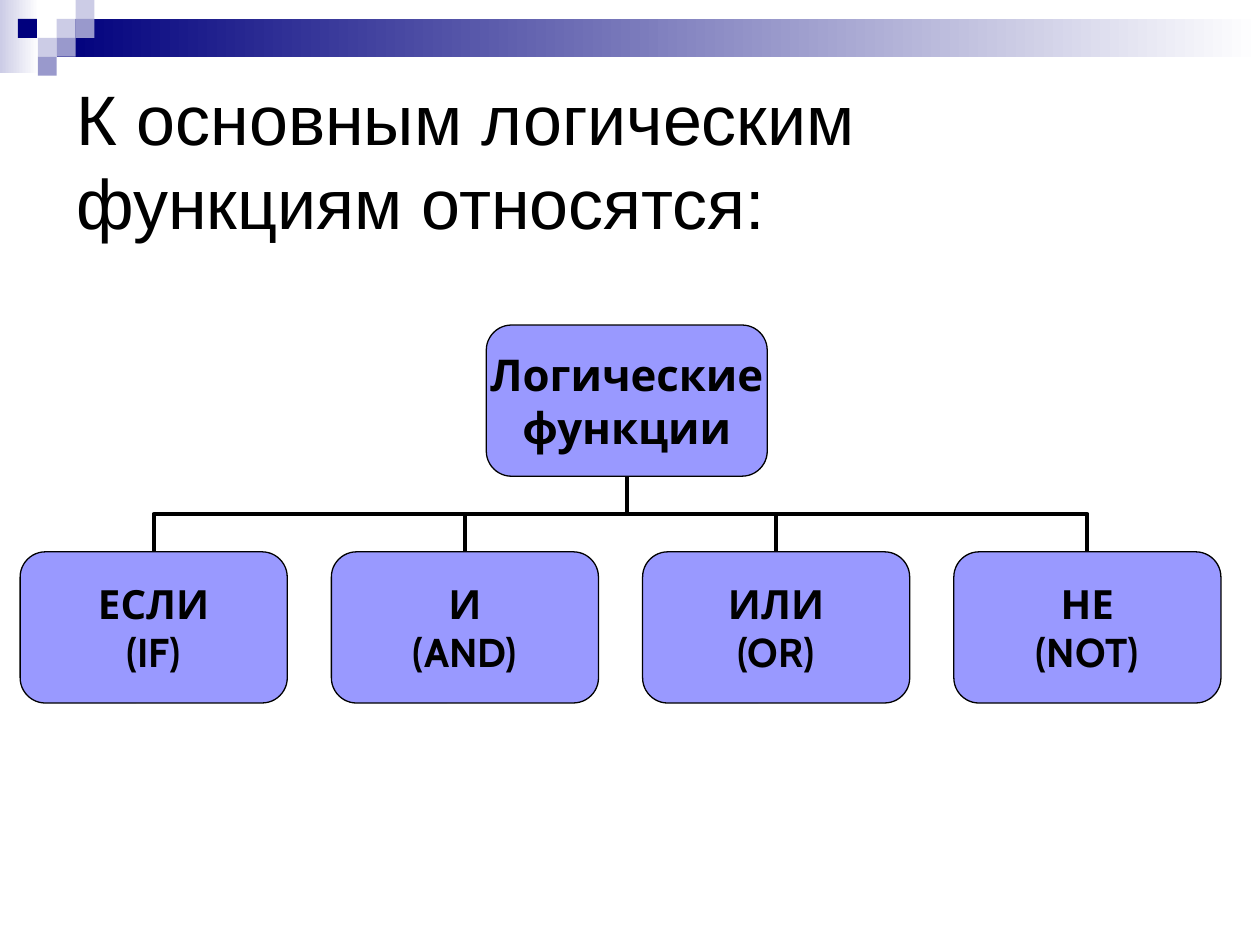
from dataclasses import dataclass

from lxml.etree import SubElement
from pptx import Presentation
from pptx.dml.color import RGBColor
from pptx.enum.shapes import MSO_CONNECTOR, MSO_SHAPE
from pptx.enum.text import MSO_ANCHOR, PP_ALIGN
from pptx.oxml.ns import qn
from pptx.util import Inches, Pt


@dataclass(frozen=True)
class Theme:
    navy: str = "00007D"
    lilac: str = "CCCCE6"
    violet: str = "9999CC"
    node: str = "9999FF"
    white: str = "FFFFFF"
    ink: str = "000000"
    title_font: str = "Arial"
    node_font: str = "Cabin"
    title_size: float = 40
    root_size: float = 25
    leaf_size: float = 23
    outline: float = 0.75
    branch: float = 2.25


@dataclass(frozen=True)
class Box:
    """A rectangle in inches."""
    left: float
    top: float
    width: float
    height: float

    @property
    def center(self):
        return self.left + self.width / 2

    @property
    def bottom(self):
        return self.top + self.height

    def inner(self, left, top, width, height):
        """Return a box inside this one, given as shares of its size."""
        return Box(self.left + left * self.width, self.top + top * self.height,
                   width * self.width, height * self.height)

    def lengths(self):
        return [Inches(v) for v in (self.left, self.top, self.width, self.height)]


THEME = Theme()
PAGE = Box(0, 0, 10, 7.5)
CELL = 0.15  # side of one square of the header mosaic
MOSAIC = [  # column, row, colour
    (3, 1, THEME.lilac), (4, 0, THEME.lilac), (4, 1, THEME.violet),
    (2, 2, THEME.lilac), (0.95, 1, THEME.navy), (3, 2, THEME.violet),
    (2, 3, THEME.violet),
]
ROOT = ["Логические", "функции"]
LEAVES = [["ЕСЛИ", "(IF)"], ["И", "(AND)"], ["ИЛИ", "(OR)"], ["НЕ", "(NOT)"]]


def color(value):
    return RGBColor.from_string(value)


def write(shape, lines, *, font, size, bold=False, align=PP_ALIGN.LEFT,
          wrap=True, inset=None):
    frame = shape.text_frame
    frame.word_wrap = wrap
    frame.vertical_anchor = MSO_ANCHOR.MIDDLE
    if inset is not None:
        frame.margin_left = frame.margin_right = Inches(inset)
        frame.margin_top = frame.margin_bottom = Inches(inset)
    for index, line in enumerate(lines):
        para = frame.paragraphs[0] if index == 0 else frame.add_paragraph()
        para.alignment = align
        span = para.add_run()
        span.text = line
        span.font.name = font
        span.font.size = Pt(size)
        span.font.bold = bold
        span.font.color.rgb = color(THEME.ink)


def add_block(page, box, fill, fade_to=None, kind=MSO_SHAPE.RECTANGLE):
    """Add a filled shape without outline; fade_to makes the fill a gradient."""
    shape = page.shapes.add_shape(kind, *box.lengths())
    shape.shadow.inherit = False
    shape.line.fill.background()
    if fade_to:
        shape.fill.gradient()
        shape.fill.gradient_angle = 0
        for stop, value, position in zip(shape.fill.gradient_stops,
                                         (fill, fade_to), (0, 1)):
            stop.color.rgb = color(value)
            stop.position = position
    else:
        shape.fill.solid()
        shape.fill.fore_color.rgb = color(fill)
    return shape


def add_header(page, box):
    add_block(page, Box(box.left, box.top, 0.31, 0.58), THEME.lilac, THEME.white)
    start = 3 * CELL
    add_block(page, Box(box.left + start, box.top + CELL, box.width - start, 2 * CELL),
              THEME.navy, THEME.white)
    for column, row, fill in MOSAIC:
        add_block(page, Box(box.left + column * CELL, box.top + row * CELL, CELL, CELL),
                  fill)


def add_title(page, box):
    shape = page.shapes.add_textbox(*box.lengths())
    write(shape, ["К основным логическим функциям относятся:"],
          font=THEME.title_font, size=THEME.title_size)


def add_node(page, box, lines, size):
    shape = add_block(page, box, THEME.node, kind=MSO_SHAPE.ROUNDED_RECTANGLE)
    shape.line.color.rgb = color(THEME.ink)
    shape.line.width = Pt(THEME.outline)
    write(shape, lines, font=THEME.node_font, size=size, bold=True,
          align=PP_ALIGN.CENTER, wrap=False, inset=0)


def add_branch(page, child, parent):
    """Join the top of child to the bottom of parent by a vertical-first elbow.

    An elbow starts horizontally, so it is laid out on its side and turned.
    """
    side = 1 if child.center > parent.center else -1
    middle_x = (child.center + parent.center) / 2
    middle_y = (child.top + parent.bottom) / 2
    half_rise = side * (child.top - parent.bottom) / 2
    half_run = abs(child.center - parent.center) / 2
    ends = (middle_x - half_rise, middle_y + half_run,
            middle_x + half_rise, middle_y - half_run)
    line = page.shapes.add_connector(MSO_CONNECTOR.ELBOW, *map(Inches, ends))
    line.line.color.rgb = color(THEME.ink)
    line.line.width = Pt(THEME.branch)
    properties = line._element.spPr
    properties.find(qn("a:xfrm")).set("rot", str((180 + side * 90) * 60000))
    SubElement(properties, qn("a:effectLst"))


def add_tree(page, box):
    height = 0.4  # two rows of nodes, with half a node between them
    pitch = 2.47 / box.width
    root = box.inner(3.7 / box.width, 0, 2.23 / box.width, height)
    leaves = [box.inner(i * pitch, 1 - height, 2.12 / box.width, height)
              for i in range(len(LEAVES))]
    for leaf in reversed(leaves):
        add_branch(page, leaf, root)
    add_node(page, root, ROOT, THEME.root_size)
    for leaf, lines in zip(leaves, LEAVES):
        add_node(page, leaf, lines, THEME.leaf_size)


def main():
    deck = Presentation()
    deck.slide_width, deck.slide_height = Inches(PAGE.width), Inches(PAGE.height)
    page = deck.slides.add_slide(deck.slide_layouts[6])
    page.background.fill.solid()
    page.background.fill.fore_color.rgb = color(THEME.white)
    add_header(page, PAGE.inner(0, 0, 1, 0.08))
    add_tree(page, Box(0.16, 2.58, 9.53, 3))
    add_title(page, Box(0.51, 0.52, 9, 1.5))
    deck.save("out.pptx")


if __name__ == "__main__":
    main()
